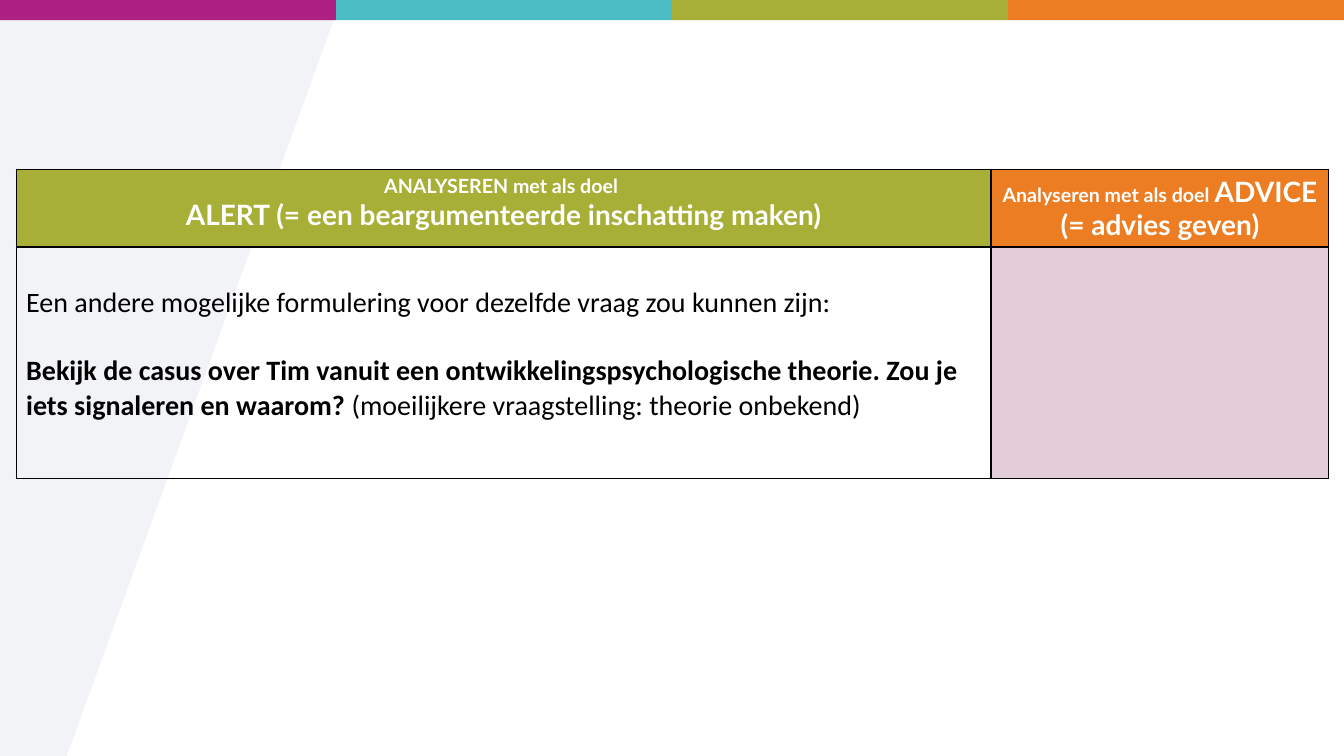
"""Build a slide with a table comparing the ALERT and ADVICE analysis goals."""
import lxml.etree
import pptx
import pptx.dml.color
import pptx.enum.shapes
import pptx.enum.text
import pptx.oxml.ns
import pptx.util

Inches = pptx.util.Inches
Pt = pptx.util.Pt
RGBColor = pptx.dml.color.RGBColor
qn = pptx.oxml.ns.qn

MAGENTA = RGBColor(0xAE, 0x20, 0x81)
TEAL = RGBColor(0x4C, 0xBC, 0xC5)
OLIVE = RGBColor(0xA8, 0xAF, 0x37)
ORANGE = RGBColor(0xEC, 0x7D, 0x23)
PINK = RGBColor(0xE3, 0xCD, 0xD8)
PALE_GREY = RGBColor(0xE8, 0xEC, 0xF0)
WHITE = RGBColor(0xFF, 0xFF, 0xFF)
BLACK = RGBColor(0, 0, 0)

SLIDE_WIDTH, SLIDE_HEIGHT = 13.33, 7.5

HEADER_SMALL = {"name": "Lato", "size": Pt(14), "bold": True}
HEADER_LARGE = {**HEADER_SMALL, "size": Pt(20)}
BODY = {"name": "Calibri", "size": Pt(20), "bold": False}
BODY_BOLD = {**BODY, "bold": True}

ALERT_HEADER = [[
    ("ANALYSEREN met als doel \v", HEADER_SMALL),
    ("ALERT (= een beargumenteerde inschatting maken)", HEADER_LARGE),
]]
ADVICE_HEADER = [[
    ("Analyseren met als doel ", HEADER_SMALL),
    ("ADVICE (= advies geven)", HEADER_LARGE),
]]
ALERT_BODY = [
    [("Een andere mogelijke formulering voor dezelfde vraag zou kunnen zijn:", BODY)],
    [
        ("Bekijk de casus over Tim vanuit een ontwikkelingspsychologische theorie. "
         "Zou je iets signaleren en waarom?", BODY_BOLD),
        (" (moeilijkere vraagstelling: theorie onbekend)", BODY),
    ],
]


def paint(shape, color):
    """Give a shape a plain fill without outline or shadow."""
    shape.shadow.inherit = False
    shape.fill.solid()
    shape.fill.fore_color.rgb = color
    shape.line.fill.background()


def add_backdrop(slide, left, top, width, height):
    """Draw the translucent slanted panel."""
    corners = [(0, 0), (1, 0), (1, 0.02), (0.2, 1), (0, 1)]
    points = [(Inches(left + x * width), Inches(top + y * height)) for x, y in corners]
    builder = slide.shapes.build_freeform(*points[0])
    builder.add_line_segments(points[1:], close=True)
    panel = builder.convert_to_shape()
    paint(panel, PALE_GREY)
    color = panel.fill._xPr.find(".//" + qn("a:srgbClr"))
    lxml.etree.SubElement(color, qn("a:alpha"), val="59000")


def add_color_bar(slide, left, top, width, height):
    """Split a strip into equal coloured blocks."""
    colors = [MAGENTA, TEAL, OLIVE, ORANGE]
    block_width = width / len(colors)
    for index, color in enumerate(colors):
        block = slide.shapes.add_shape(
            pptx.enum.shapes.MSO_SHAPE.RECTANGLE,
            Inches(left + index * block_width), Inches(top),
            Inches(block_width), Inches(height))
        paint(block, color)


def add_borders(cell):
    """Draw thin black lines on all sides of a cell."""
    properties = cell._tc.get_or_add_tcPr()
    for position, side in enumerate(["a:lnL", "a:lnR", "a:lnT", "a:lnB"]):
        line = lxml.etree.Element(qn(side), w=str(Pt(1)))
        fill = lxml.etree.SubElement(line, qn("a:solidFill"))
        lxml.etree.SubElement(fill, qn("a:srgbClr"), val=str(BLACK))
        properties.insert(position, line)


def fill_cell(cell, paragraphs, fill, text_color, alignment):
    """Set the fill, borders and formatted text of a cell."""
    if fill is None:
        cell.fill.background()
    else:
        cell.fill.solid()
        cell.fill.fore_color.rgb = fill
    add_borders(cell)
    for index, runs in enumerate(paragraphs):
        frame = cell.text_frame
        paragraph = frame.add_paragraph() if index else frame.paragraphs[0]
        paragraph.alignment = alignment
        if index:
            paragraph.space_before = Pt(24)
        for text, font_format in runs:
            pieces = text.split("\v")
            for number, piece in enumerate(pieces):
                if number:
                    paragraph.add_line_break()
                if piece:
                    run = paragraph.add_run()
                    run.text = piece
                    for name, value in font_format.items():
                        setattr(run.font, name, value)
                    run.font.color.rgb = text_color


def add_goal_table(slide, left, top, width, height):
    """Place the table with a header and a body row for both goals."""
    table = slide.shapes.add_table(
        2, 2, Inches(left), Inches(top), Inches(width), Inches(height)).table
    table.horz_banding = False
    header_height, advice_width = 0.77, 3.35
    table.columns[0].width = Inches(width - advice_width)
    table.columns[1].width = Inches(advice_width)
    table.rows[0].height = Inches(header_height)
    table.rows[1].height = Inches(height - header_height)
    center = pptx.enum.text.PP_ALIGN.CENTER
    start = pptx.enum.text.PP_ALIGN.LEFT
    fill_cell(table.cell(0, 0), ALERT_HEADER, OLIVE, WHITE, center)
    fill_cell(table.cell(0, 1), ADVICE_HEADER, ORANGE, WHITE, center)
    fill_cell(table.cell(1, 0), ALERT_BODY, None, BLACK, start)
    fill_cell(table.cell(1, 1), [], PINK, BLACK, start)
    table.cell(1, 0).margin_top = Inches(0.39)


def main():
    """Create the presentation and save it."""
    presentation = pptx.Presentation()
    presentation.slide_width = Inches(SLIDE_WIDTH)
    presentation.slide_height = Inches(SLIDE_HEIGHT)
    slide = presentation.slides.add_slide(presentation.slide_layouts[6])
    add_backdrop(slide, 0, 0.05, 3.31, 7.45)
    add_color_bar(slide, 0, 0, SLIDE_WIDTH, 0.2)
    add_goal_table(slide, 0.16, 1.68, 13.02, 3.07)
    presentation.save("out.pptx")


if __name__ == "__main__":
    main()
